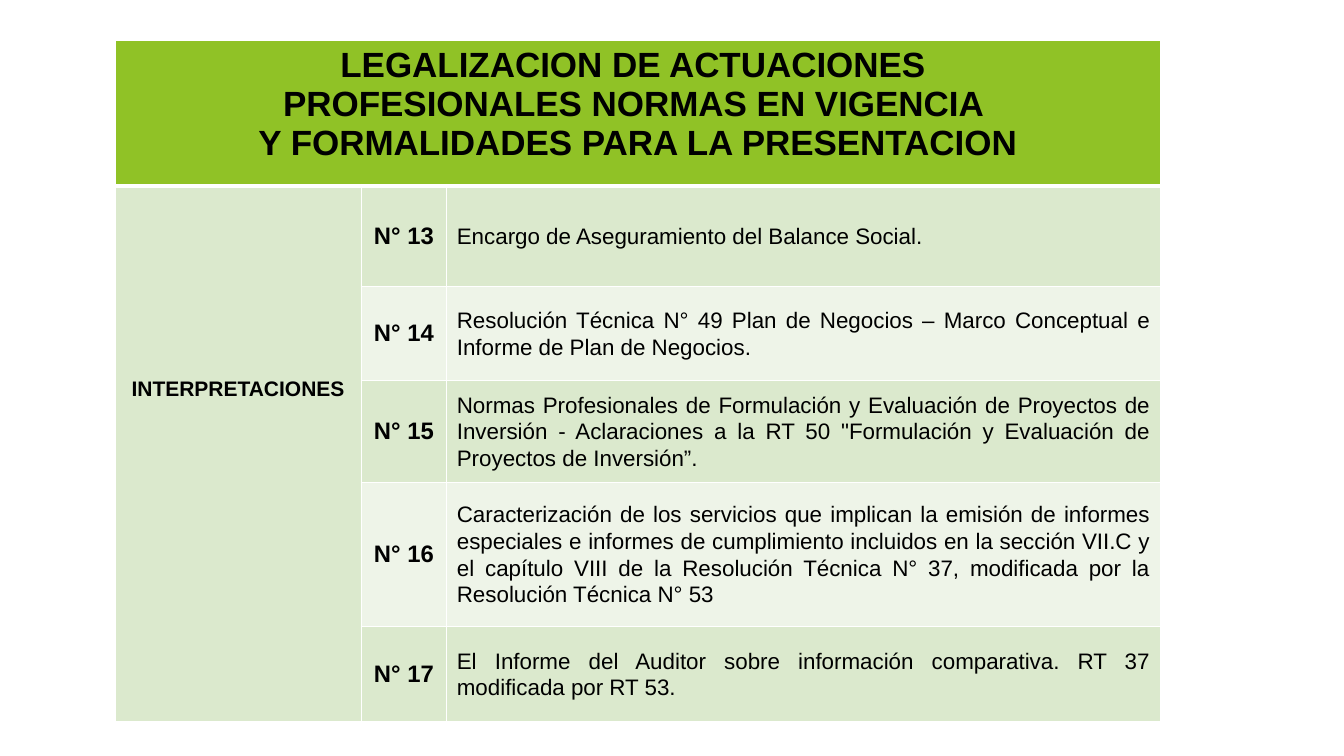
from lxml import etree
from pptx import Presentation, util as u
from pptx.dml.color import RGBColor
from pptx.enum import text
from pptx.oxml import ns

HEADING = [
    "LEGALIZACION DE ACTUACIONES ",
    "PROFESIONALES NORMAS EN VIGENCIA ",
    "Y FORMALIDADES PARA LA PRESENTACION",
]
CATEGORY = "INTERPRETACIONES"
RULES = [
    ("N° 13", "Encargo de Aseguramiento del Balance Social."),
    ("N° 14", "Resolución Técnica N° 49 Plan de Negocios – Marco Conceptual e "
              "Informe de Plan de Negocios."),
    ("N° 15", "Normas Profesionales de Formulación y Evaluación de Proyectos de "
              "Inversión - Aclaraciones a la RT 50 \"Formulación y Evaluación de "
              "Proyectos de Inversión”."),
    ("N° 16", "Caracterización de los servicios que implican la emisión de informes "
              "especiales e informes de cumplimiento incluidos en la sección VII.C y "
              "el capítulo VIII de la Resolución Técnica N° 37, modificada por la "
              "Resolución Técnica N° 53"),
    ("N° 17", "El Informe del Auditor sobre información comparativa. RT 37 "
              "modificada por RT 53."),
]
COLUMN_WIDTHS = [6.2, 2.16, 17.98]
ROW_HEIGHTS = [3.66, 2.54, 2.36, 2.57, 3.63, 2.41]


def color(value):
    return RGBColor.from_string(value)


class SlideBuilder:
    FONT = "Arial"
    INK = "000000"
    BORDER = "FFFFFF"
    HEADER_FILL = "90C226"
    BANDS = ["DBE9CD", "EEF4E8"]

    def __init__(self, slide):
        self.slide = slide

    def table(self, left, top, widths, heights):
        frame = self.slide.shapes.add_table(
            len(heights), len(widths), u.Cm(left), u.Cm(top),
            u.Cm(sum(widths)), u.Cm(sum(heights)))
        table = frame.table
        for column, width in zip(table.columns, widths):
            column.width = u.Cm(width)
        for row, height in zip(table.rows, heights):
            row.height = u.Cm(height)
        return table

    def surface(self, cell, fill, top=1, bottom=1):
        """Fill a cell and draw its borders; top and bottom are line widths in points."""
        cell.fill.solid()
        cell.fill.fore_color.rgb = color(fill)
        properties = cell._tc.get_or_add_tcPr()
        borders = {"lnL": 1, "lnR": 1, "lnT": top, "lnB": bottom}
        for index, (tag, width) in enumerate(borders.items()):
            line = etree.Element(ns.qn(f"a:{tag}"), w=str(u.Pt(width)))
            solid = etree.SubElement(line, ns.qn("a:solidFill"))
            etree.SubElement(solid, ns.qn("a:srgbClr"), val=self.BORDER)
            properties.insert(index, line)

    def cell_text(self, cell, lines, size, bold=True, align=text.PP_ALIGN.CENTER,
                  anchor=text.MSO_ANCHOR.MIDDLE):
        cell.vertical_anchor = anchor
        cell.text_frame.text = "\n".join(lines)
        for paragraph in cell.text_frame.paragraphs:
            paragraph.alignment = align
            for run in paragraph.runs:
                run.font.name = self.FONT
                run.font.size = u.Pt(size)
                run.font.bold = bold
                run.font.color.rgb = color(self.INK)

    def body_text(self, cell, content):
        self.cell_text(cell, [content], 16, bold=False, align=text.PP_ALIGN.JUSTIFY)
        paragraph = cell.text_frame.paragraphs[0]
        paragraph.line_spacing = 1.07
        paragraph.space_after = u.Pt(8)


def main():
    presentation = Presentation()
    presentation.slide_width = u.Cm(33.87)
    presentation.slide_height = u.Cm(19.05)
    builder = SlideBuilder(presentation.slides.add_slide(presentation.slide_layouts[6]))

    table = builder.table(2.9, 1.02, COLUMN_WIDTHS, ROW_HEIGHTS)
    last_row, last_column = len(ROW_HEIGHTS) - 1, len(COLUMN_WIDTHS) - 1
    for column in range(last_column + 1):
        builder.surface(table.cell(0, column), builder.HEADER_FILL, bottom=3)
        for row in range(1, last_row + 1):
            band = 0 if column == 0 else (row - 1) % 2
            builder.surface(table.cell(row, column), builder.BANDS[band],
                            top=3 if row == 1 else 1)

    header = table.cell(0, 0)
    header.merge(table.cell(0, last_column))
    builder.cell_text(header, HEADING, 25, anchor=text.MSO_ANCHOR.TOP)

    category = table.cell(1, 0)
    category.merge(table.cell(last_row, 0))
    builder.cell_text(category, [CATEGORY], 15)
    category.margin_bottom = u.Cm(3.38)

    for row, (number, content) in enumerate(RULES, start=1):
        builder.cell_text(table.cell(row, 1), [number], 17)
        builder.body_text(table.cell(row, 2), content)

    presentation.save("out.pptx")


if __name__ == "__main__":
    main()
